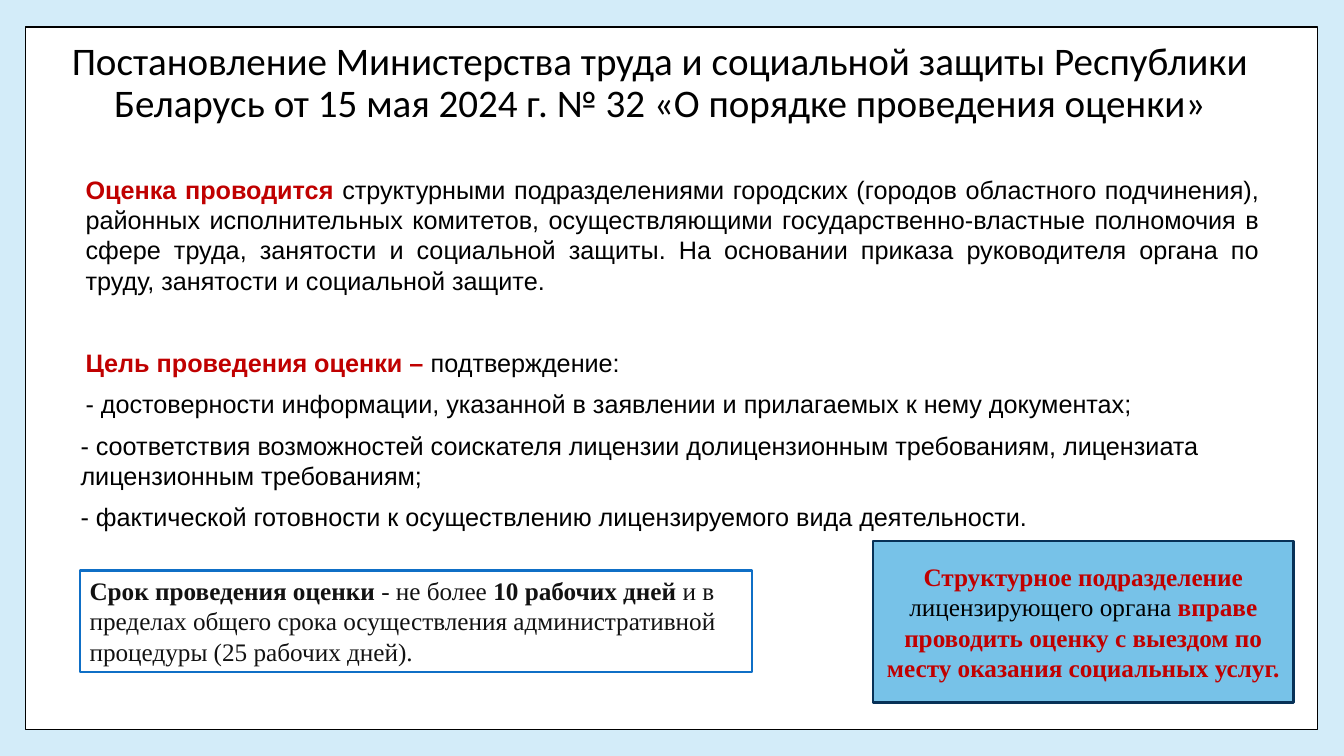
import pptx
import pptx.util
import pptx.dml.color
import pptx.enum.shapes
import pptx.enum.text

RGB = pptx.dml.color.RGBColor
SKY = RGB(0xD3, 0xEC, 0xF9)
WHITE = RGB(0xFF, 0xFF, 0xFF)
BLACK = RGB(0x00, 0x00, 0x00)
INK = RGB(0x12, 0x12, 0x12)
RED = RGB(0xC0, 0x00, 0x00)
LIGHT_BLUE = RGB(0x77, 0xC2, 0xE8)
NAVY = RGB(0x07, 0x31, 0x57)
BLUE = RGB(0x0F, 0x6F, 0xC6)

ALIGN = pptx.enum.text.PP_ALIGN
ANCHOR = pptx.enum.text.MSO_ANCHOR
Pt = pptx.util.Pt

prs = pptx.Presentation()
prs.slide_width = pptx.util.Inches(13.33)
prs.slide_height = pptx.util.Inches(7.5)
CELL = prs.slide_height / 90  # the slide is 160 columns by 90 rows
s = prs.slides.add_slide(prs.slide_layouts[6])
s.background.fill.solid()
s.background.fill.fore_color.rgb = SKY


def add_box(grid, fill=None, line=None, width=1.5, anchor=ANCHOR.TOP):
    """Add a box at (column, row, columns, rows) and return its text frame."""
    at = [round(n * CELL) for n in grid]
    if fill is None:
        sp = s.shapes.add_textbox(*at)
    else:
        sp = s.shapes.add_shape(pptx.enum.shapes.MSO_SHAPE.RECTANGLE, *at)
        sp.shadow.inherit = False
        sp.fill.solid()
        sp.fill.fore_color.rgb = fill
        sp.line.color.rgb = line
        sp.line.width = Pt(width)
    tf = sp.text_frame
    tf.word_wrap = True
    tf.vertical_anchor = anchor
    return tf


def write(p, runs, font, size=18, indent=0, **paragraph_format):
    """Fill a paragraph with (text, colour, bold) runs; indent is in columns."""
    for name, value in paragraph_format.items():
        setattr(p, name, value)
    if indent:
        p._p.get_or_add_pPr().set("marL", str(round(indent * CELL)))
    for text, colour, bold in runs:
        r = p.add_run()
        r.text = text
        r.font.color.rgb = colour
        for name, value in {"name": font, "size": Pt(size), "bold": bold}.items():
            setattr(r.font, name, value)


add_box((3, 3.24, 153.84, 83.64), WHITE, BLACK, 1)

tf = add_box((3, 2.28, 148.08, 15.48), anchor=ANCHOR.MIDDLE)
write(tf.paragraphs[0], [
    ("Постановление Министерства труда и социальной защиты Республики Беларусь "
     "от 15 мая 2024 г. № 32 «О порядке проведения оценки»", BLACK, False),
], "Calibri", 27.9, 3, alignment=ALIGN.CENTER, line_spacing=0.9, space_after=Pt(4))

tf = add_box((103.92, 64.44, 50.04, 19.2), LIGHT_BLUE, NAVY, anchor=ANCHOR.MIDDLE)
write(tf.paragraphs[0], [
    ("Структурное подразделение ", RED, True),
    ("лицензирующего органа ", BLACK, False),
    ("вправе проводить оценку с выездом по месту оказания социальных услуг.", RED, True),
], "Times New Roman", alignment=ALIGN.CENTER)

tf = add_box((9.48, 67.92, 80.04, 12.12), WHITE, BLUE)
write(tf.paragraphs[0], [
    ("Срок проведения оценки", INK, True),
    (" - не более ", INK, False),
    ("10 рабочих дней", INK, True),
    (" и в пределах общего срока осуществления административной "
     "процедуры (25 рабочих дней).", INK, False),
], "Times New Roman", alignment=ALIGN.LEFT)

# each row: red lead, black text, alignment, indent, space before
body = [
    ("Оценка проводится ",
     "структурными подразделениями городских (городов областного подчинения), "
     "районных исполнительных комитетов, осуществляющими государственно-властные "
     "полномочия в сфере труда, занятости и социальной защиты. На основании приказа "
     "руководителя органа по труду, занятости и социальной защите.",
     ALIGN.JUSTIFY, 0.6, 0),
    ("Цель проведения оценки – ", "подтверждение:", ALIGN.JUSTIFY, 0.6, 29),
    ("", "- достоверности информации, указанной в заявлении и прилагаемых "
     "к нему документах;", ALIGN.JUSTIFY, 0.6, 0),
    ("", "- соответствия возможностей соискателя лицензии долицензионным требованиям, "
     "лицензиата лицензионным требованиям;", ALIGN.LEFT, 0, 0),
    ("", "- фактической готовности к осуществлению лицензируемого вида деятельности.",
     ALIGN.LEFT, 0, 0),
]
tf = add_box((8.4, 20.16, 142.68, 44.28))
for i, (lead, text, align, indent, before) in enumerate(body):
    p = tf.add_paragraph() if i else tf.paragraphs[0]
    runs = [(lead, RED, True)] if lead else []
    write(p, runs + [(text, BLACK, False)], "Arial", indent=indent,
          alignment=align, space_before=Pt(before), space_after=Pt(8))

prs.save("out.pptx")
